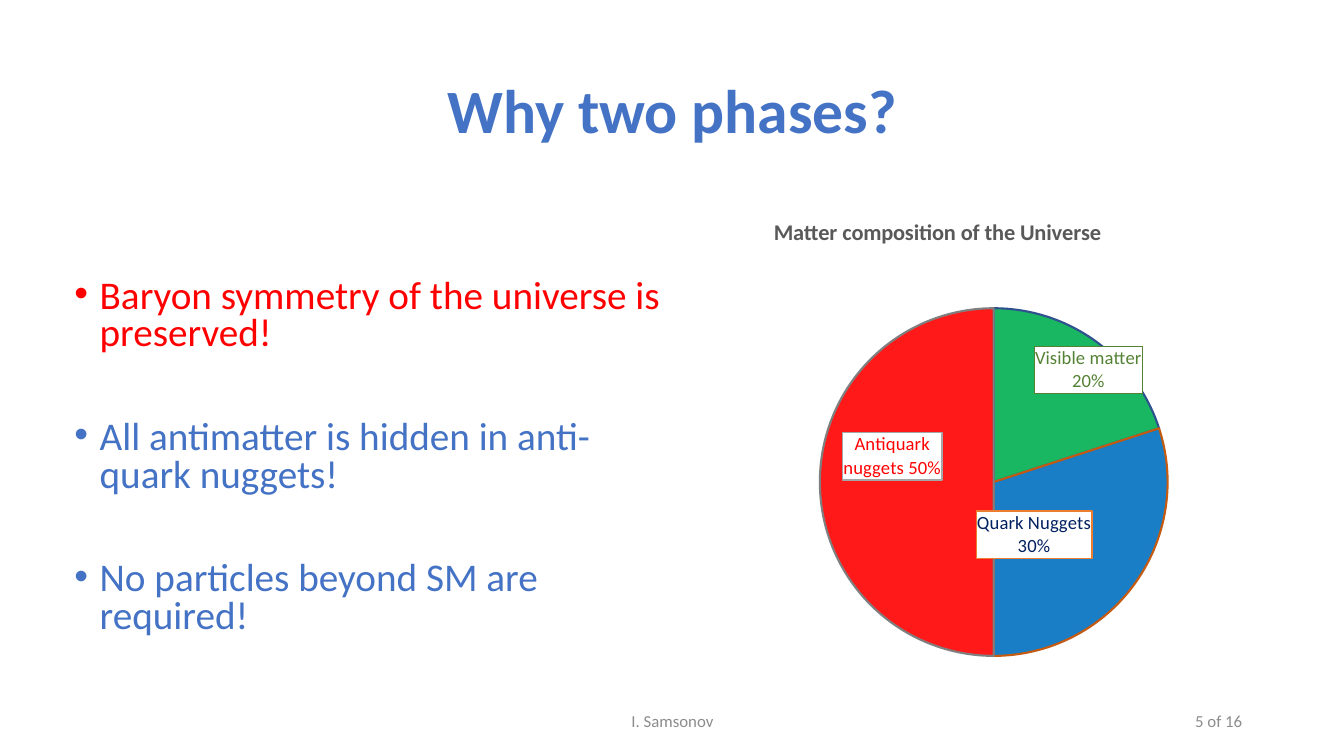
from lxml.etree import SubElement
from pptx import Presentation
from pptx.chart.data import CategoryChartData
from pptx.dml.color import RGBColor
from pptx.enum.chart import XL_CHART_TYPE, XL_LABEL_POSITION
from pptx.enum.text import MSO_ANCHOR, PP_ALIGN
from pptx.oxml import parse_xml
from pptx.oxml.ns import nsdecls, qn
from pptx.util import Inches, Pt

THEME = {
    "font": "Calibri",
    "blue": "4472C4", "red": "FF0000", "grey": "8C8C8C", "chart title": "595959",
    "title": 44, "body": 28, "heading": 16, "label": 13.3, "footer": 12,
}


def style(font, size, color, bold=False):
    font.name, font.size, font.bold = THEME["font"], Pt(THEME[size]), bold
    font.color.rgb = RGBColor.from_string(color)


def add_text(box, lines, size, colors, align, anchor, bold=False):
    """Add a wrapped text box with one paragraph per line; return its paragraphs."""
    frame = slide.shapes.add_textbox(*map(Inches, box)).text_frame
    frame.word_wrap = True
    frame.vertical_anchor = anchor
    frame.text = "\n".join(lines)
    for paragraph, color in zip(frame.paragraphs, colors):
        paragraph.alignment = align
        style(paragraph.runs[0].font, size, color, bold)
    return frame.paragraphs


presentation = Presentation()
presentation.slide_width, presentation.slide_height = Inches(13.33), Inches(7.5)
slide = presentation.slides.add_slide(presentation.slide_layouts[6])

# Title and footer
heading = add_text((0.92, 0.4, 11.5, 1.45), ["Why two phases?"], "title",
                   [THEME["blue"]], PP_ALIGN.CENTER, MSO_ANCHOR.MIDDLE, bold=True)
heading[0].line_spacing = 0.9
for left, width, text, align in [(4.42, 4.5, "I. Samsonov", PP_ALIGN.CENTER),
                                 (9.42, 3, "5 of 16", PP_ALIGN.RIGHT)]:
    add_text((left, 6.95, width, 0.4), [text], "footer", [THEME["grey"]],
             align, MSO_ANCHOR.MIDDLE)

# Arguments
arguments = add_text(
    (0.64, 2.72, 6.21, 3.84),
    ["Baryon symmetry of the universe is preserved!",
     "All antimatter is hidden in anti-quark nuggets!",
     "No particles beyond SM are required!"],
    "body", [THEME["red"], THEME["blue"], THEME["blue"]], PP_ALIGN.LEFT, MSO_ANCHOR.TOP)
for order, argument in enumerate(arguments):
    argument.line_spacing = 0.8
    argument.space_before = Pt(47 if order else 10)
    properties = argument._p.get_or_add_pPr()
    properties.set("marL", str(Inches(0.25)))
    properties.set("indent", str(Inches(-0.25)))
    SubElement(properties, qn("a:buFont"), typeface="Arial")
    SubElement(properties, qn("a:buChar"), char="•")

# Matter composition: name, share, fill, outline, label text, label border, label shift
matter = [
    ("Visible matter 20%", 20, "00B050", "2F528F", "548235", "548235", (0.077, 0)),
    ("Quark Nuggets 30%", 30, "0070C0", "C55A11", "002060", "ED7D31", (-0.058, -0.046)),
    ("Antiquark nuggets 50%", 50, "FF0000", "7F7F7F", "FF0000", "A5A5A5", (0.026, -0.054)),
]
composition = CategoryChartData(number_format="0")
composition.categories = [part[0] for part in matter]
composition.add_series("Series 1", [part[1] for part in matter])
chart = slide.shapes.add_chart(XL_CHART_TYPE.PIE, *map(Inches, (6.62, 2.02, 6.46, 4.76)),
                               composition).chart
style(chart.font, "label", "000000")
chart.has_legend = False
chart.has_title = True
chart.chart_title.text_frame.text = "Matter composition of the Universe"
style(chart.chart_title.text_frame.paragraphs[0].runs[0].font, "heading",
      THEME["chart title"], bold=True)
chart.chart_title.include_in_layout = False

plot = chart.plots[0]
plot.vary_by_categories = True
plot.has_data_labels = True
plot.data_labels.show_category_name = True
plot.data_labels.show_value = False
plot.data_labels.position = XL_LABEL_POSITION.INSIDE_END

for index, (_, _, fill, outline, ink, border, (dx, dy)) in enumerate(matter):
    point = plot.series[0].points[index]
    point.format.fill.solid()
    point.format.fill.fore_color.rgb = RGBColor.from_string(fill)
    fill_color = point.format.fill._xPr.find(qn("a:solidFill"))[0]
    SubElement(fill_color, qn("a:alpha"), val="90000")
    point.format.line.color.rgb = RGBColor.from_string(outline)
    point.format.line.width = Pt(1.5)

    style(point.data_label.font, "label", ink)
    point.data_label.position = XL_LABEL_POSITION.INSIDE_END
    label = plot.series[0]._element.find(qn("c:dLbls")).findall(qn("c:dLbl"))[index]
    label.find(qn("c:showVal")).set("val", "0")
    label.find(qn("c:showCatName")).set("val", "1")
    label.find(qn("c:showPercent")).set("val", "0")
    for old in label.findall(qn("c:spPr")):
        label.remove(old)
    label.find(qn("c:idx")).addnext(parse_xml(
        f'<c:spPr {nsdecls("c", "a")}><a:solidFill><a:srgbClr val="FFFFFF"/></a:solidFill>'
        f'<a:ln w="{Pt(1)}"><a:solidFill><a:srgbClr val="{border}"/></a:solidFill></a:ln>'
        '</c:spPr>'))
    label.find(qn("c:idx")).addnext(parse_xml(
        f'<c:layout {nsdecls("c")}><c:manualLayout><c:x val="{dx}"/><c:y val="{dy}"/>'
        '</c:manualLayout></c:layout>'))

# Places of the chart title and the pie, as shares of the chart
for owner, before, shares in [
    (chart.chart_title._element, "c:tx", {"x": 0.157, "y": 0.02}),
    (plot._element.getparent(), None, {"x": 0.234, "y": 0.218, "w": 0.534, "h": 0.725}),
]:
    for old in owner.findall(qn("c:layout")):
        owner.remove(old)
    target = '<c:layoutTarget val="inner"/>' if "w" in shares else ""
    modes = "".join(f'<c:{side}Mode val="edge"/>' for side in "xy")
    values = "".join(f'<c:{side} val="{share}"/>' for side, share in shares.items())
    layout = parse_xml(f'<c:layout {nsdecls("c")}><c:manualLayout>{target}{modes}{values}'
                       '</c:manualLayout></c:layout>')
    owner.insert(0, layout) if before is None else owner.find(qn(before)).addnext(layout)

presentation.save("out.pptx")
